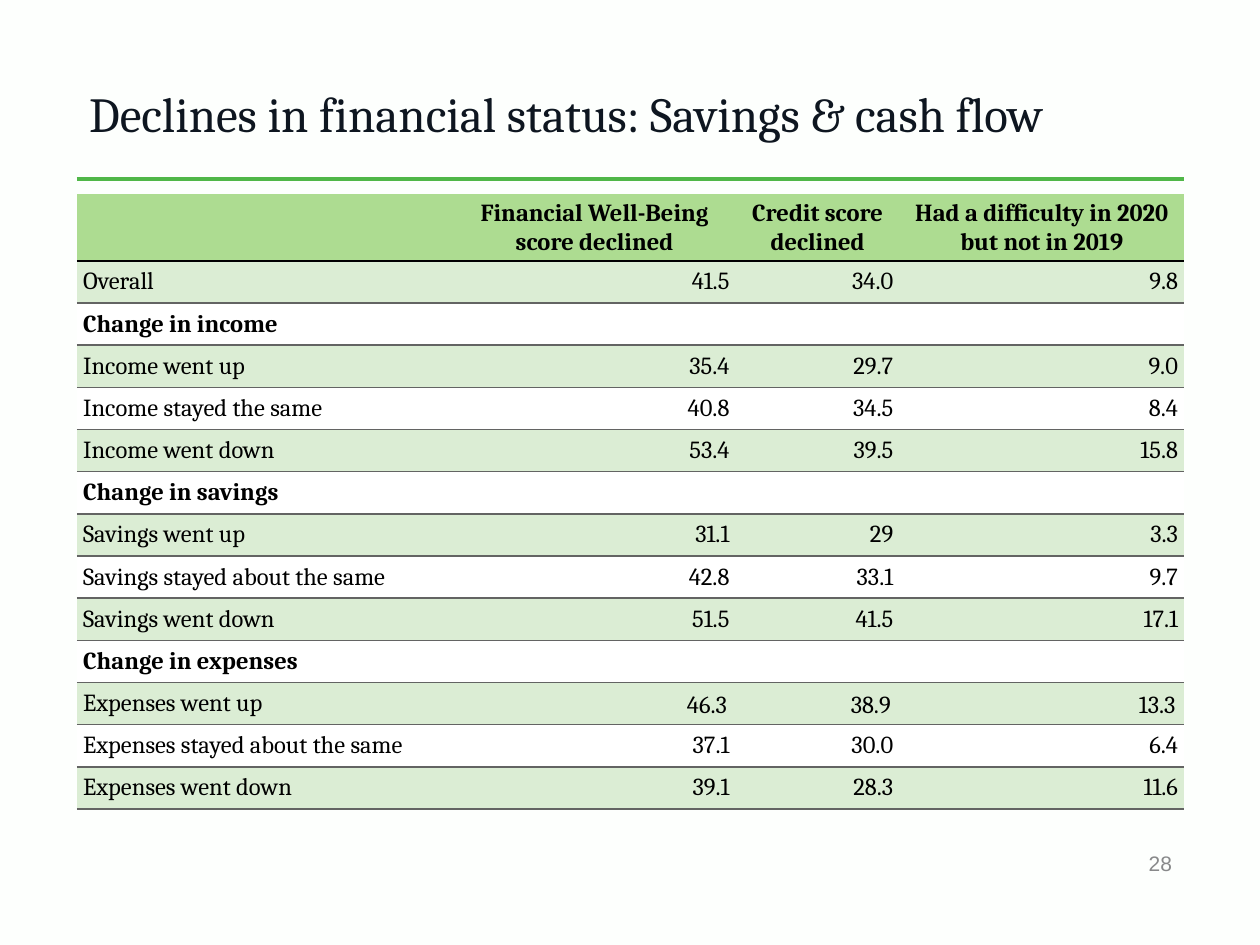
from lxml.etree import SubElement
from pptx import Presentation
from pptx.dml.color import RGBColor
from pptx.enum.shapes import MSO_CONNECTOR
from pptx.enum.text import MSO_ANCHOR, PP_ALIGN
from pptx.oxml.ns import qn
from pptx.util import Inches, Pt

BACKGROUND = RGBColor(0xFD, 0xFF, 0xFD)
INK = RGBColor(0x0E, 0x16, 0x20)
BLACK = RGBColor(0, 0, 0)
WHITE = RGBColor(0xFF, 0xFF, 0xFF)
GRAY = RGBColor(0x88, 0x89, 0x8A)
RULE_GRAY = RGBColor(0x63, 0x64, 0x63)
GREEN = RGBColor(0x50, 0xB7, 0x48)
HEADER_GREEN = RGBColor(0xAD, 0xDC, 0x91)
BAND_GREEN = RGBColor(0xDB, 0xED, 0xD4)

COLS, ROWS = 100, 75
LEFT, WIDTH = 6.1, 87.9
NO_STYLE = "{2D5ABB26-0587-4C30-8999-92F81FD0307C}"
COL_WIDTHS = [29.9, 22.4, 13, 22.6]
HEADER_HEIGHT, ROW_HEIGHT = 5.3, 3.35

HEADER = ["", "Financial Well-Being score declined", "Credit score declined",
          "Had a difficulty in 2020 but not in 2019"]
DATA = [
    ["Overall", "41.5", "34.0", "9.8"],
    ["Change in income"],
    ["Income went up", "35.4", "29.7", "9.0"],
    ["Income stayed the same", "40.8", "34.5", "8.4"],
    ["Income went down", "53.4", "39.5", "15.8"],
    ["Change in savings"],
    ["Savings went up", "31.1", "29", "3.3"],
    ["Savings stayed about the same", "42.8", "33.1", "9.7"],
    ["Savings went down", "51.5", "41.5", "17.1"],
    ["Change in expenses"],
    ["Expenses went up", "46.3", "38.9", "13.3"],
    ["Expenses stayed about the same", "37.1", "30.0", "6.4"],
    ["Expenses went down", "39.1", "28.3", "11.6"],
]
SPACED_ROW, MERGED_ROW = "Expenses went up", "Change in expenses"

HEAD_TEXT = dict(size=Pt(14), name="Cambria", bold=True)
BODY_TEXT = dict(HEAD_TEXT, bold=False)
HEAD_INSETS = (0.01, 0.01, 0.01, 0)
BODY_INSETS = (0.05, 0.05, 0.05, 0.05)
SPACED_INSETS = (0.07, 0, 0.07, 0)


class Deck:
    def __init__(self):
        self.prs = Presentation()
        self.prs.slide_width, self.prs.slide_height = Inches(10), Inches(7.5)
        self.s = self.prs.slides.add_slide(self.prs.slide_layouts[6])
        fill = self.s.background.fill
        fill.solid()
        fill.fore_color.rgb = BACKGROUND

    def x(self, cols):
        return round(self.prs.slide_width * cols / COLS)

    def y(self, rows):
        return round(self.prs.slide_height * rows / ROWS)

    def paragraph(self, p, text, fmt, color=BLACK, align=PP_ALIGN.LEFT):
        p.alignment = align
        if not text:
            # An empty cell otherwise takes the default size and stretches its row.
            p._p.get_or_add_endParaRPr().set("sz", str(int(fmt["size"].pt * 100)))
            return
        r = p.add_run()
        r.text = text
        for key, value in fmt.items():
            setattr(r.font, key, value)
        r.font.color.rgb = color

    def text(self, box, text, fmt, color, align=PP_ALIGN.LEFT):
        left, top, width, height = box
        sp = self.s.shapes.add_textbox(self.x(left), self.y(top),
                                       self.x(width), self.y(height))
        tf = sp.text_frame
        tf.word_wrap = True
        tf.vertical_anchor = MSO_ANCHOR.MIDDLE
        self.paragraph(tf.paragraphs[0], text, fmt, color, align)

    def rule(self, left, top, width, color, weight):
        line = self.s.shapes.add_connector(
            MSO_CONNECTOR.STRAIGHT, self.x(left), self.y(top),
            self.x(left + width), self.y(top))
        line.line.color.rgb = color
        line.line.width = Pt(weight)
        SubElement(line._element.spPr, qn("a:effectLst"))

    def table(self, left, top, widths, heights):
        frame = self.s.shapes.add_table(
            len(heights), len(widths), self.x(left), self.y(top),
            self.x(sum(widths)), self.y(sum(heights)))
        table = frame.table
        table.horz_banding = False
        table._tbl.tblPr.find(qn("a:tableStyleId")).text = NO_STYLE
        for col, width in zip(table.columns, widths):
            col.width = self.x(width)
        for row, height in zip(table.rows, heights):
            row.height = self.y(height)
        return table

    def border(self, cell, side, color):
        ln = SubElement(cell._tc.get_or_add_tcPr(), qn(f"a:{side}"), w=str(Pt(1)))
        fill = SubElement(ln, qn("a:solidFill"))
        SubElement(fill, qn("a:srgbClr"), val=str(color))

    def cell(self, cell, text, fmt, align, insets, fill, top, bottom):
        """Fill one table cell; top and bottom are border colours or None."""
        for side, color in (("lnT", top), ("lnB", bottom)):
            if color is not None:
                self.border(cell, side, color)
        cell.fill.solid()
        cell.fill.fore_color.rgb = fill
        cell.vertical_anchor = MSO_ANCHOR.MIDDLE
        for side, inset in zip(("left", "top", "right", "bottom"), insets):
            setattr(cell, f"margin_{side}", Inches(inset))
        p = cell.text_frame.paragraphs[0]
        self.paragraph(p, text, fmt, align=align)
        return p


def fill_table(deck):
    heights = [HEADER_HEIGHT] + [ROW_HEIGHT] * len(DATA)
    table = deck.table(LEFT, 15.4, COL_WIDTHS, heights)
    for c, title in enumerate(HEADER):
        deck.cell(table.cell(0, c), title, HEAD_TEXT, PP_ALIGN.CENTER,
                  HEAD_INSETS, HEADER_GREEN, None, BLACK)
    for r, (label, *values) in enumerate(DATA, start=1):
        fill = BAND_GREEN if r % 2 else WHITE
        top = BLACK if r == 1 else RULE_GRAY
        fmt = BODY_TEXT if values else HEAD_TEXT
        deck.cell(table.cell(r, 0), label, fmt, PP_ALIGN.LEFT,
                  BODY_INSETS, fill, top, RULE_GRAY)
        spaced = label == SPACED_ROW
        for c, value in enumerate(values or [""] * 3, start=1):
            p = deck.cell(table.cell(r, c), value, BODY_TEXT, PP_ALIGN.RIGHT,
                          SPACED_INSETS if spaced else BODY_INSETS,
                          fill, top, RULE_GRAY)
            if spaced:
                p.line_spacing = 1.15
        if label == MERGED_ROW:
            table.cell(r, 0).merge(table.cell(r, len(HEADER) - 1))


def main():
    deck = Deck()
    deck.rule(LEFT, 14.2, WIDTH, GREEN, 2)
    deck.text((LEFT, 4.9, WIDTH, 8.1),
              "Declines in financial status: Savings & cash flow",
              dict(size=Pt(28), name="Cambria"), INK)
    fill_table(deck)
    deck.text((62.3, 66.5, 31.7, 4), "28",
              dict(size=Pt(12), name="Arial"), GRAY, PP_ALIGN.RIGHT)
    deck.prs.save("out.pptx")


if __name__ == "__main__":
    main()
